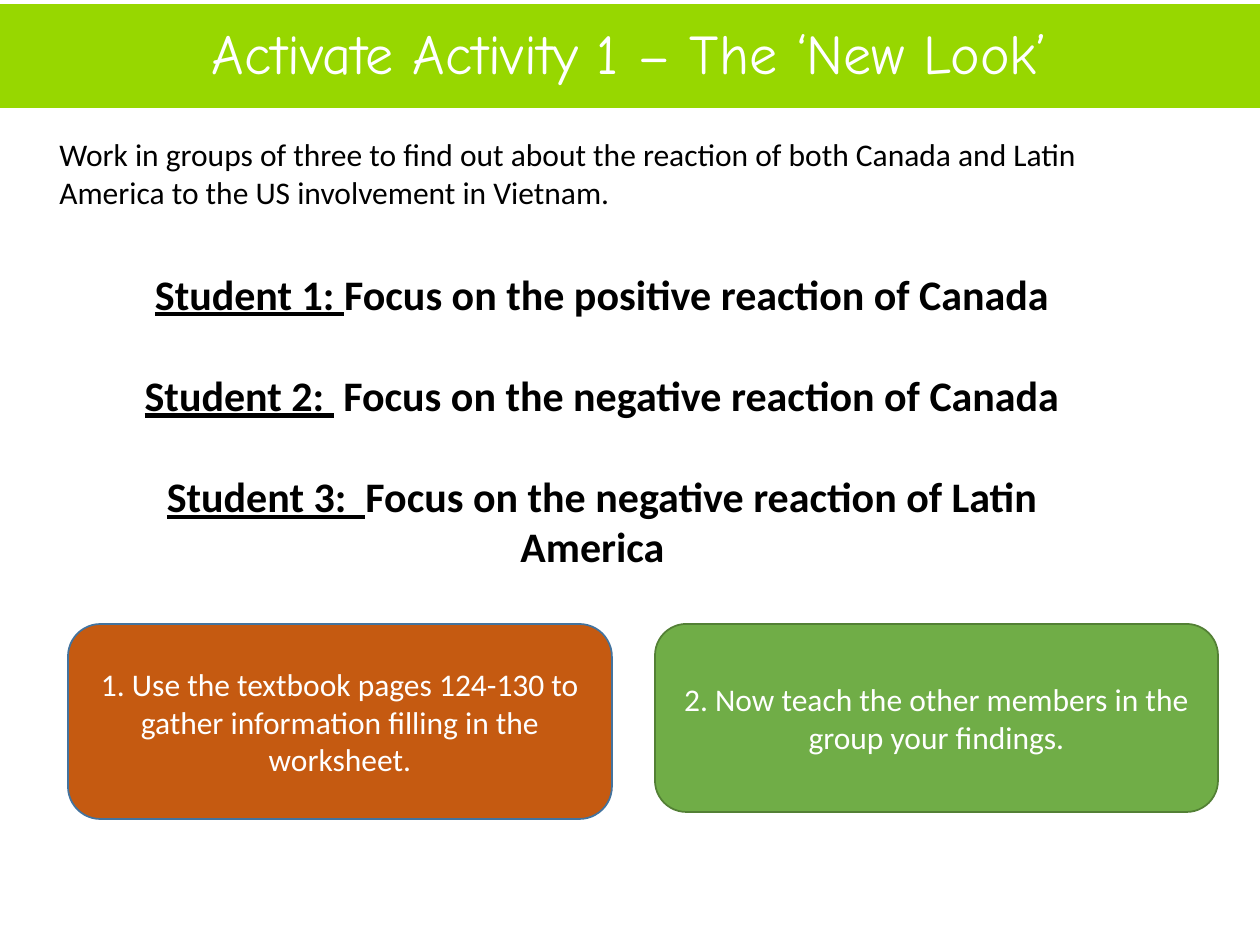
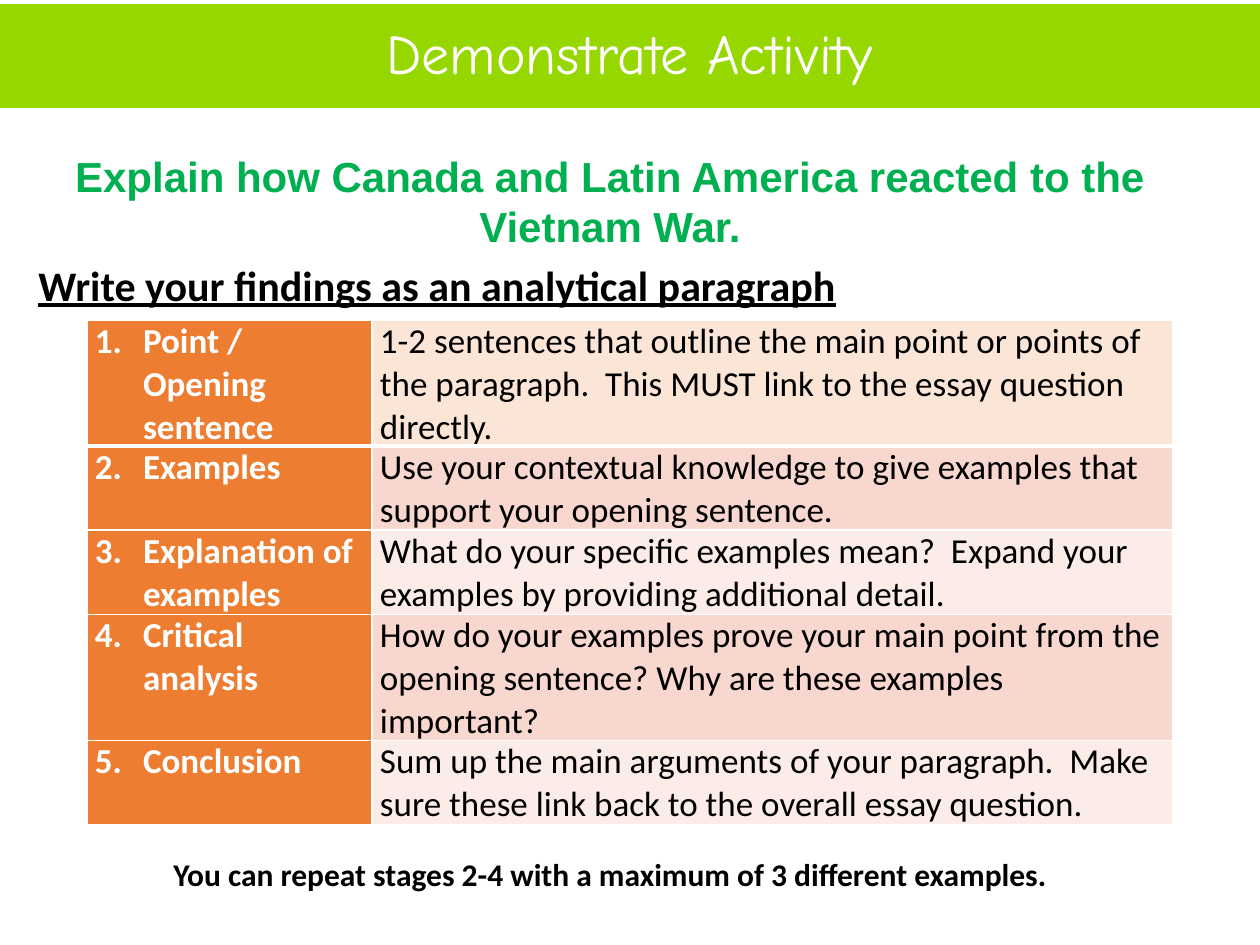
from lxml.etree import SubElement
from pptx import Presentation
from pptx.dml.color import RGBColor
from pptx.enum.shapes import MSO_SHAPE as Shape
from pptx.enum.text import MSO_ANCHOR as Anchor, MSO_AUTO_SIZE as AutoSize, PP_ALIGN as Align
from pptx.oxml.ns import qn
from pptx.util import Pt

PX = 7257
WHITE = RGBColor(0xFF, 0xFF, 0xFF)
BLACK = RGBColor(0x00, 0x00, 0x00)
BAND_GREEN = RGBColor(0x97, 0xD7, 0x00)
QUESTION_GREEN = RGBColor(0x00, 0xB0, 0x50)
RUST = RGBColor(0xC5, 0x5A, 0x11)
RUST_EDGE = RGBColor(0x43, 0x73, 0x9E)
LEAF = RGBColor(0x70, 0xAD, 0x47)
LEAF_EDGE = RGBColor(0x53, 0x80, 0x35)
ORANGE = RGBColor(0xED, 0x7D, 0x31)
PEACH = RGBColor(0xFB, 0xE5, 0xD6)
ROSE = RGBColor(0xF8, 0xD7, 0xCE)
PALE_ROSE = RGBColor(0xFC, 0xEC, 0xE8)


def add_run(paragraph, text, size, color=BLACK, bold=False, underline=False, font="Calibri"):
    run = paragraph.add_run()
    run.text = text
    run.font.name = font
    run.font.size = Pt(size)
    run.font.color.rgb = color
    run.font.bold = bold
    run.font.underline = underline


def add_text_box(slide, left, top, width, height, align=Align.LEFT):
    box = slide.shapes.add_textbox(left * PX, top * PX, width * PX, height * PX)
    frame = box.text_frame
    frame.word_wrap = True
    frame.auto_size = AutoSize.SHAPE_TO_FIT_TEXT
    frame.paragraphs[0].alignment = align
    return frame


presentation = Presentation()
presentation.slide_width = 1260 * PX
presentation.slide_height = 945 * PX

slides = []
for heading in ("Activate Activity 1 – The ‘New Look’", "Demonstrate Activity"):
    slide = presentation.slides.add_slide(presentation.slide_layouts[5])
    title = slide.shapes.title
    title.left, title.top, title.width, title.height = 0, 4 * PX, 1260 * PX, 104 * PX
    title.fill.solid()
    title.fill.fore_color.rgb = BAND_GREEN
    title.text_frame.auto_size = AutoSize.NONE
    title.text_frame.vertical_anchor = Anchor.MIDDLE
    paragraph = title.text_frame.paragraphs[0]
    paragraph.alignment = Align.CENTER
    paragraph.line_spacing = 0.93
    add_run(paragraph, heading, 32, WHITE, font="Comic Neue")
    slides.append(slide)
group_slide, paragraph_slide = slides

intro = add_text_box(group_slide, 47, 129, 1131, 90)
add_run(
    intro.paragraphs[0],
    "Work in groups of three to find out about the reaction of both Canada and Latin America "
    "to the US involvement in Vietnam.",
    18,
)

roles = [
    ("Student 1: ", "Focus on the positive reaction of Canada"),
    ("Student 2: ", " Focus on the negative reaction of Canada"),
    ("Student 3:  ", "Focus on the negative reaction of Latin America  "),
]
role_frame = add_text_box(group_slide, 79, 262, 1046, 318)
for index, (student, focus) in enumerate(roles):
    paragraph = role_frame.add_paragraph() if index else role_frame.paragraphs[0]
    paragraph.alignment = Align.CENTER
    if index:
        paragraph.space_before = Pt(29)
    add_run(paragraph, student, 24, bold=True, underline=True)
    add_run(paragraph, focus, 24, bold=True)

steps = [
    (68, 544, 195, RUST, RUST_EDGE,
     "1. Use the textbook pages 124-130 to gather information filling in the worksheet."),
    (655, 563, 188, LEAF, LEAF_EDGE,
     "2. Now teach the other members in the group your findings."),
]
for left, width, height, fill, edge, instruction in steps:
    step = group_slide.shapes.add_shape(
        Shape.ROUNDED_RECTANGLE, left * PX, 624 * PX, width * PX, height * PX)
    step.shadow.inherit = False
    step.fill.solid()
    step.fill.fore_color.rgb = fill
    step.line.color.rgb = edge
    step.line.width = Pt(1)
    step.text_frame.word_wrap = True
    step.text_frame.vertical_anchor = Anchor.MIDDLE
    paragraph = step.text_frame.paragraphs[0]
    paragraph.alignment = Align.CENTER
    add_run(paragraph, instruction, 18, WHITE)

findings = add_text_box(paragraph_slide, 26, 253, 1168, 63)
add_run(findings.paragraphs[0], "Write your findings as an analytical paragraph", 24,
        bold=True, underline=True)

question = add_text_box(paragraph_slide, 26, 144, 1168, 115, Align.CENTER)
add_run(question.paragraphs[0],
        "Explain how Canada and Latin America reacted to the Vietnam War.",
        24, QUESTION_GREEN, bold=True, font="Arial")

stages = [
    ("Point / Opening sentence", 126, PEACH,
     "1-2 sentences that outline the main point or points of the paragraph.  "
     "This MUST link to the essay question directly."),
    ("Examples", 84, ROSE,
     "Use your contextual knowledge to give examples that support your opening sentence."),
    ("Explanation of examples", 84, PALE_ROSE,
     "What do your specific examples mean?  Expand your examples by providing additional detail."),
    ("Critical analysis", 126, ROSE,
     "How do your examples prove your main point from the opening sentence? "
     "Why are these examples important?"),
    ("Conclusion", 84, PALE_ROSE,
     "Sum up the main arguments of your paragraph.  "
     "Make sure these link back to the overall essay question."),
]
table = paragraph_slide.shapes.add_table(
    len(stages), 2, 87 * PX, 320 * PX, 1086 * PX, 504 * PX).table
table.first_row = False
table.horz_banding = False
table.columns[0].width = 285 * PX
table.columns[1].width = 801 * PX
for row, (stage, height, tint, advice) in enumerate(stages):
    table.rows[row].height = height * PX
    for column, (text, fill, color) in enumerate([(stage, ORANGE, WHITE), (advice, tint, BLACK)]):
        cell = table.cell(row, column)
        cell.margin_left = cell.margin_right = 8 * PX
        cell.margin_top = cell.margin_bottom = 0
        cell_properties = cell._tc.get_or_add_tcPr()
        for side in "LRTB":
            thick = (side == "B" and row == 0) or (side == "T" and row == 1)
            border = SubElement(cell_properties, qn(f"a:ln{side}"), w=str(Pt(3 if thick else 1)))
            border_fill = SubElement(border, qn("a:solidFill"))
            SubElement(border_fill, qn("a:srgbClr"), val=str(WHITE))
        cell.fill.solid()
        cell.fill.fore_color.rgb = fill
        paragraph = cell.text_frame.paragraphs[0]
        if column == 0:
            numbering = paragraph._p.get_or_add_pPr()
            numbering.set("marL", str(48 * PX))
            numbering.set("indent", str(-48 * PX))
            SubElement(numbering, qn("a:buFont"), typeface="+mj-lt")
            SubElement(numbering, qn("a:buAutoNum"), type="arabicPeriod", startAt=str(row + 1))
        add_run(paragraph, text, 20, color, bold=column == 0)

reminder = add_text_box(paragraph_slide, 161, 849, 937, 51)
add_run(reminder.paragraphs[0],
        "You can repeat stages 2-4 with a maximum of 3 different examples.", 18, bold=True)

presentation.save("out.pptx")
